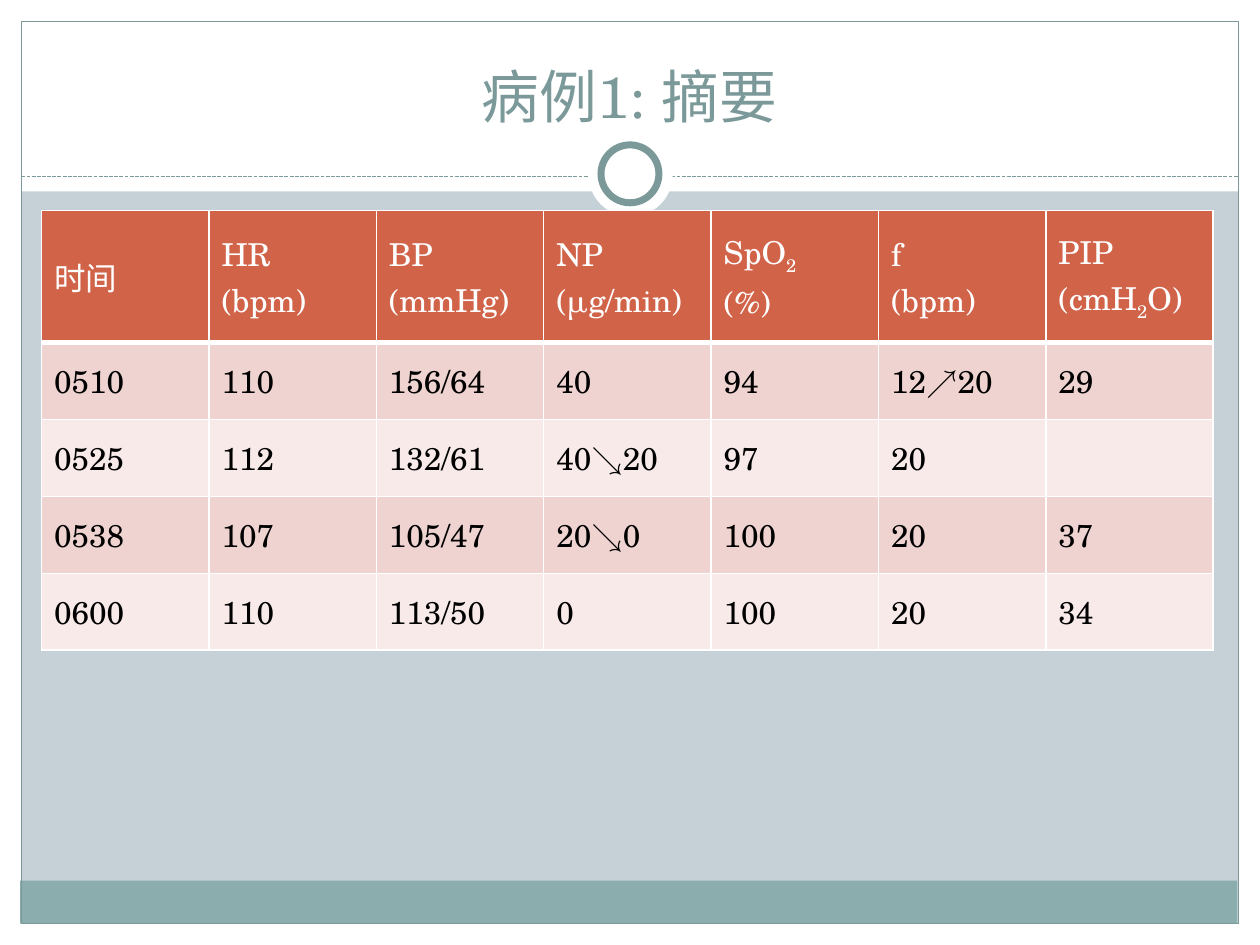
"""Build the case 1 summary slide with its table of vital signs."""
import itertools

import lxml.etree
import pptx
import pptx.dml.color
import pptx.enum.dml
import pptx.enum.shapes
import pptx.enum.text
import pptx.oxml.ns
import pptx.util

Inches = pptx.util.Inches
Pt = pptx.util.Pt
RGBColor = pptx.dml.color.RGBColor
Shape = pptx.enum.shapes.MSO_SHAPE
qn = pptx.oxml.ns.qn

TITLE = "病例1: 摘要"
ROWS = [
    ["时间", "HR\n(bpm)", "BP (mmHg)", "NP\n(μg/min)", "SpO₂\n(%)", "f\n(bpm)", "PIP\n(cmH₂O)"],
    ["0510", "110", "156/64", "40", "94", "12↗20", "29"],
    ["0525", "112", "132/61", "40↘20", "97", "20", ""],
    ["0538", "107", "105/47", "20↘0", "100", "20", "37"],
    ["0600", "110", "113/50", "0", "100", "20", "34"],
]
ROW_HEIGHTS = [1.05] + [0.61] * 4
TABLE_LEFT, TABLE_TOP, TABLE_WIDTH = 0.33, 1.67, 9.3

FONT, ARROW_FONT = "TeX Gyre Schola", "Arial"
WHITE = RGBColor(0xFF, 0xFF, 0xFF)
BLACK = RGBColor(0, 0, 0)
BACKGROUND = RGBColor(0xC5, 0xD1, 0xD7)
TEAL = RGBColor(0x7C, 0x99, 0x9A)
FOOTER = RGBColor(0x8C, 0xAD, 0xAE)
HEADER = RGBColor(0xD1, 0x63, 0x49)
BANDS = [RGBColor(0xF7, 0xEA, 0xE9), RGBColor(0xEE, 0xD3, 0xD0)]

FRAME_BACK = [
    (Shape.RECTANGLE, (0, 7.33, 10, 0.17), WHITE, None),
    (Shape.RECTANGLE, (0, 0, 10, 1.52), WHITE, None),
    (Shape.RECTANGLE, (0, 0, 0.17, 7.5), WHITE, None),
    (Shape.RECTANGLE, (9.83, 0, 0.17, 7.5), WHITE, None),
    (Shape.RECTANGLE, (0.16, 6.99, 9.66, 0.34), FOOTER, None),
    (Shape.RECTANGLE, (0.17, 0.17, 9.66, 7.16), None, 0.75),
]
RING = [
    (Shape.OVAL, (4.67, 1.05, 0.67, 0.67), WHITE, None),
    (Shape.OVAL, (4.77, 1.15, 0.46, 0.46), WHITE, 4),
]


def add_shapes(slide, items):
    for kind, box, fill, line_width in items:
        shape = slide.shapes.add_shape(kind, *map(Inches, box))
        shape.shadow.inherit = False
        if fill is None:
            shape.fill.background()
        else:
            shape.fill.solid()
            shape.fill.fore_color.rgb = fill
        if line_width is None:
            shape.line.fill.background()
        else:
            shape.line.color.rgb = TEAL
            shape.line.width = Pt(line_width)


def add_divider(slide):
    line = slide.shapes.add_connector(
        pptx.enum.shapes.MSO_CONNECTOR.STRAIGHT, *map(Inches, (0.17, 1.4, 9.83, 1.4)))
    line.line.color.rgb = TEAL
    line.line.width = Pt(0.75)
    line.line.dash_style = pptx.enum.dml.MSO_LINE.SQUARE_DOT
    lxml.etree.SubElement(line._element.spPr, qn("a:effectLst"))


def format_run(run, size, color, font=FONT):
    run.font.size = Pt(size)
    run.font.name = font
    run.font.bold = False
    run.font.color.rgb = color


def add_title(slide):
    frame = slide.shapes.add_textbox(*map(Inches, (0.33, 0.25, 9.33, 0.83))).text_frame
    frame.word_wrap = True
    frame.vertical_anchor = pptx.enum.text.MSO_ANCHOR.BOTTOM
    frame.text = TITLE
    paragraph = frame.paragraphs[0]
    paragraph.alignment = pptx.enum.text.PP_ALIGN.CENTER
    format_run(paragraph.runs[0], 33, TEAL)


def run_kind(character):
    return {"₂": "subscript", "↗": "arrow", "↘": "arrow"}.get(character, "plain")


def write_cell(cell, text, color):
    cell.vertical_anchor = pptx.enum.text.MSO_ANCHOR.MIDDLE
    cell.text = text
    for paragraph, line in zip(cell.text_frame.paragraphs, text.split("\n")):
        paragraph.text = ""
        for kind, characters in itertools.groupby(line, run_kind):
            run = paragraph.add_run()
            run.text = "".join(characters).replace("₂", "2")
            format_run(run, 18, color, ARROW_FONT if kind == "arrow" else FONT)
            if kind == "subscript":
                run.font._element.set("baseline", "-25000")


def set_borders(cell, widths):
    properties = cell._tc.get_or_add_tcPr()
    for index, (side, width) in enumerate(widths.items()):
        border = lxml.etree.Element(qn("a:ln" + side), w=str(Pt(width)))
        fill = lxml.etree.SubElement(border, qn("a:solidFill"))
        lxml.etree.SubElement(fill, qn("a:srgbClr"), val=str(WHITE))
        properties.insert(index, border)


def add_vitals_table(slide):
    table = slide.shapes.add_table(
        len(ROWS), len(ROWS[0]), Inches(TABLE_LEFT), Inches(TABLE_TOP),
        Inches(TABLE_WIDTH), Inches(sum(ROW_HEIGHTS))).table
    for row_index, (texts, height) in enumerate(zip(ROWS, ROW_HEIGHTS)):
        table.rows[row_index].height = Inches(height)
        is_header = row_index == 0
        widths = {"L": 1, "R": 1, "T": 3 if row_index == 1 else 1, "B": 3 if is_header else 1}
        for column_index, text in enumerate(texts):
            cell = table.cell(row_index, column_index)
            write_cell(cell, text, WHITE if is_header else BLACK)
            cell.fill.solid()
            cell.fill.fore_color.rgb = HEADER if is_header else BANDS[row_index % 2]
            set_borders(cell, widths)


def main():
    presentation = pptx.Presentation()
    presentation.slide_width = Inches(10)
    presentation.slide_height = Inches(7.5)
    slide = presentation.slides.add_slide(presentation.slide_layouts[6])
    slide.background.fill.solid()
    slide.background.fill.fore_color.rgb = BACKGROUND
    add_shapes(slide, FRAME_BACK)
    add_divider(slide)
    add_shapes(slide, RING)
    add_title(slide)
    add_vitals_table(slide)
    presentation.save("out.pptx")


if __name__ == "__main__":
    main()
